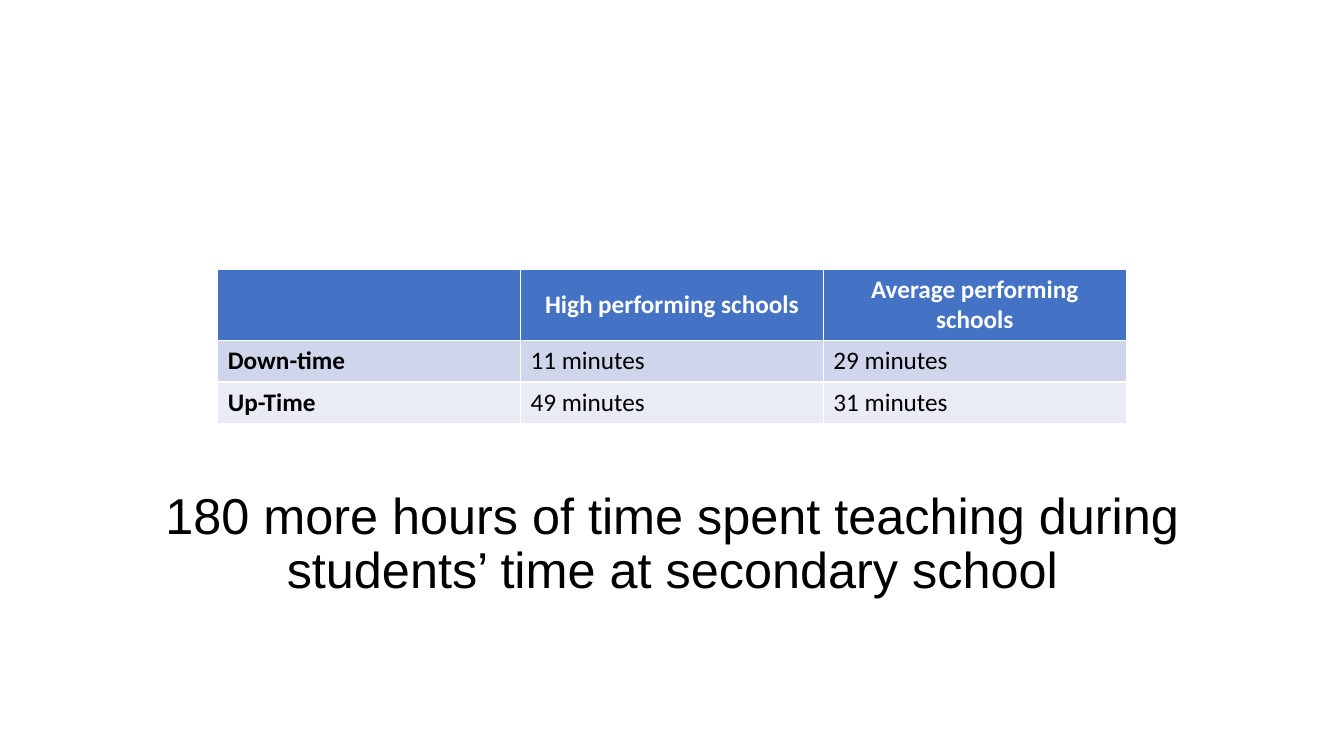
"""Build a slide comparing teaching time in high and average performing schools."""
from lxml import etree
from pptx import Presentation
from pptx.dml.color import RGBColor
from pptx.enum.text import MSO_ANCHOR, MSO_AUTO_SIZE, PP_ALIGN
from pptx.oxml.ns import qn
from pptx.util import Inches, Pt

CENTER, LEFT = PP_ALIGN.CENTER, PP_ALIGN.LEFT
MIDDLE, TOP = MSO_ANCHOR.MIDDLE, MSO_ANCHOR.TOP
NO_AUTOFIT = MSO_AUTO_SIZE.NONE

ROWS = [
    ["", "High performing schools", "Average performing schools"],
    ["Down-time", "11 minutes", "29 minutes"],
    ["Up-Time", "49 minutes", "31 minutes"],
]
ROW_HEIGHTS = [0.7, 0.41, 0.41]
ROW_FILLS = ["4472C4", "CFD5EA", "E9EBF5"]


def color(value):
    return RGBColor.from_string(value)


def format_font(font, **values):
    font.color.rgb = color(values.pop("color"))
    for name, value in values.items():
        setattr(font, name, value)


presentation = Presentation()
presentation.slide_width = Inches(13.33)
presentation.slide_height = Inches(7.5)
slide = presentation.slides.add_slide(presentation.slide_layouts[1])

title = slide.shapes.title
title.element.getparent().remove(title.element)

body = slide.placeholders[1]
body_format = {"left": 0.92, "top": 2, "width": 11.5, "height": 4.76}
for name, value in body_format.items():
    setattr(body, name, Inches(value))
frame = body.text_frame
frame.auto_size = NO_AUTOFIT
frame.vertical_anchor = TOP
frame.margin_top = Inches(2.87)
frame.text = "180 more hours of time spent teaching during students’ time at secondary school"
paragraph = frame.paragraphs[0]
paragraph_format = {"alignment": CENTER, "line_spacing": 0.9, "space_before": Pt(0)}
for name, value in paragraph_format.items():
    setattr(paragraph, name, value)
format_font(paragraph.runs[0].font, name="Arial", size=Pt(36), color="000000")
properties = paragraph._p.get_or_add_pPr()
properties.set("marL", "0")
properties.set("indent", "0")
etree.SubElement(properties, qn("a:buNone"))

table = slide.shapes.add_table(
    len(ROWS), len(ROWS[0]), Inches(2.16), Inches(2.67), Inches(9.01), Inches(sum(ROW_HEIGHTS))
).table
for row_index, texts in enumerate(ROWS):
    table.rows[row_index].height = Inches(ROW_HEIGHTS[row_index])
    header = row_index == 0
    for column_index, text in enumerate(texts):
        cell = table.cell(row_index, column_index)
        cell.fill.solid()
        cell.fill.fore_color.rgb = color(ROW_FILLS[row_index])
        cell.vertical_anchor = MIDDLE if header else TOP
        cell.text = text
        paragraph = cell.text_frame.paragraphs[0]
        paragraph.alignment = CENTER if header else LEFT
        format_font(
            paragraph.font if not text else paragraph.runs[0].font,
            name="Calibri",
            size=Pt(18),
            bold=header or column_index == 0,
            color="FFFFFF" if header else "000000",
        )

presentation.save("out.pptx")
